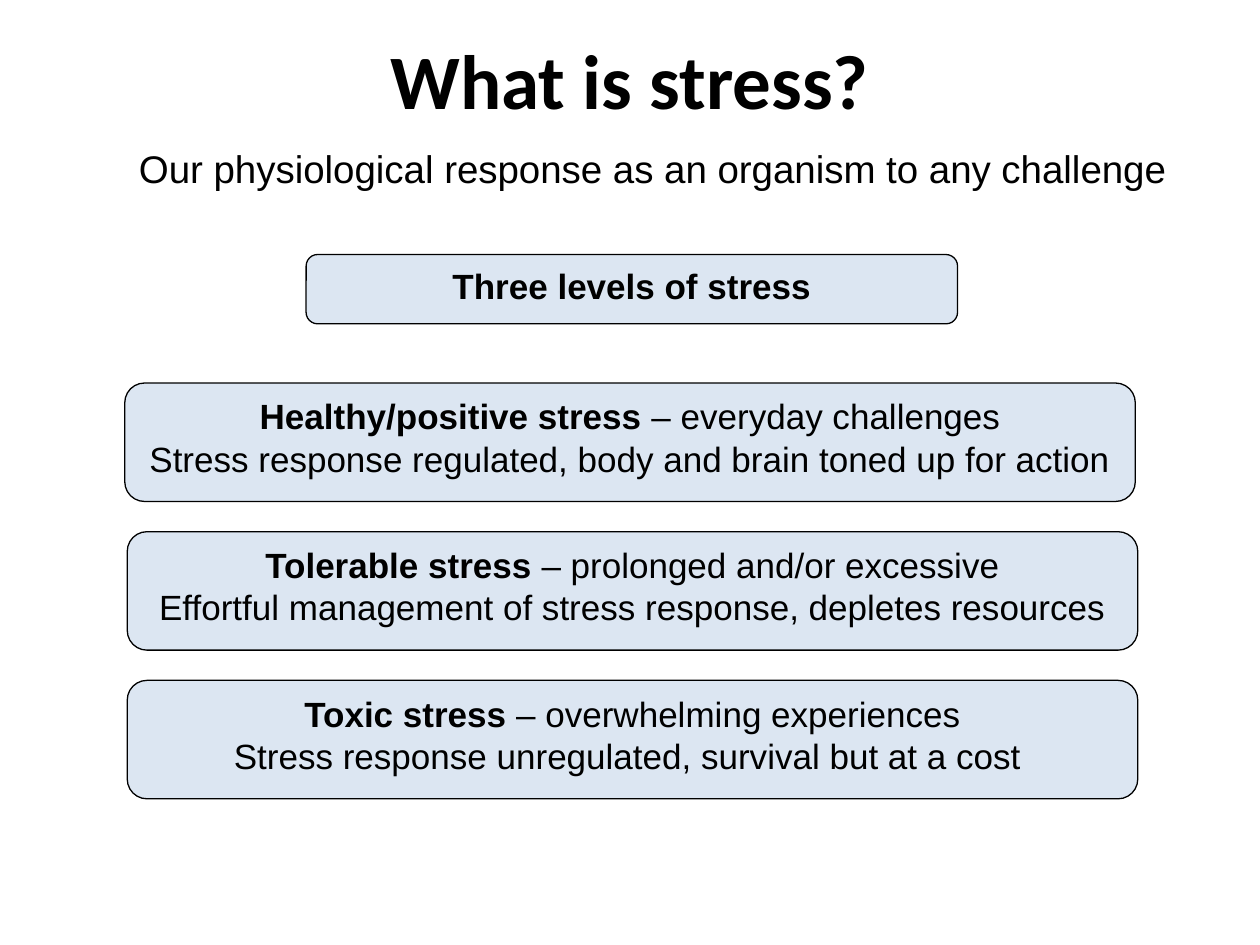
from pptx import Presentation, util as u
from pptx.dml.color import RGBColor
from pptx.enum import shapes, text

INK, PALE = "000000", "DCE6F2"
TOP, STEP, WIDE, HIGH = 3.04, 1.18, 8.02, 0.94
LEVELS = [
    (0.99, "Healthy/positive stress ", "– everyday challenges",
     "Stress response regulated, body and brain toned up for action"),
    (1.01, "Tolerable stress ", "– prolonged and/or excessive",
     "Effortful management of stress response, depletes resources"),
    (1.01, "Toxic stress ", "– overwhelming experiences",
     "Stress response unregulated, survival but at a cost "),
]


def color(code):
    """Turn a hex string into a colour."""
    return RGBColor.from_string(code)


def style(para, size, face="Arial", bold=False):
    """Centre a paragraph and set its font."""
    para.alignment = text.PP_ALIGN.CENTER
    para.space_before = u.Pt(0)
    font = para.font
    font.size, font.name, font.bold = u.Pt(size), face, bold
    font.color.rgb = color(INK)


def head(holder, box, words, size, face, bold, anchor):
    """Place and fill a heading placeholder."""
    holder.left, holder.top, holder.width, holder.height = map(u.Inches, box)
    frame = holder.text_frame
    frame.text = words
    frame.auto_size = text.MSO_AUTO_SIZE.NONE
    frame.vertical_anchor = anchor
    style(frame.paragraphs[0], size, face, bold)
    return frame


def panel(slide, box, lines):
    """Draw a rounded panel from lines of (words, bold) runs."""
    kind = shapes.MSO_SHAPE.FLOWCHART_ALTERNATE_PROCESS
    shape = slide.shapes.add_shape(kind, *map(u.Inches, box))
    shape.shadow.inherit = False
    shape.fill.solid()
    shape.fill.fore_color.rgb = color(PALE)
    shape.line.color.rgb = color(INK)
    shape.line.width = u.Pt(0.75)
    frame = shape.text_frame
    frame.word_wrap = True
    frame.vertical_anchor = text.MSO_ANCHOR.TOP
    for row, runs in enumerate(lines):
        para = frame.add_paragraph() if row else frame.paragraphs[0]
        style(para, 20)
        for words, bold in runs:
            run = para.add_run()
            run.text = words
            run.font.bold = bold


def main():
    """Build and save the slide."""
    deck = Presentation()
    deck.slide_width, deck.slide_height = u.Inches(10), u.Inches(7.5)
    slide = deck.slides.add_slide(deck.slide_layouts[0])
    title, sub = slide.placeholders
    head(title, (0.5, 0.1, 9, 1.05), "What is stress?",
         44, "Calibri", True, text.MSO_ANCHOR.MIDDLE)
    frame = head(sub, (0.24, 1.15, 9.88, 0.55),
                 "Our physiological response as an organism to any challenge",
                 22, "Arial", False, text.MSO_ANCHOR.TOP)
    frame.margin_top = 0
    panel(slide, (2.43, 2.02, 5.17, 0.55), [[("Three levels of stress", True)]])
    for row, (left, name, gist, note) in enumerate(LEVELS):
        panel(slide, (left, TOP + row * STEP, WIDE, HIGH),
              [[(name, True), (gist, False)], [(note, False)]])
    deck.save("out.pptx")


if __name__ == "__main__":
    main()
